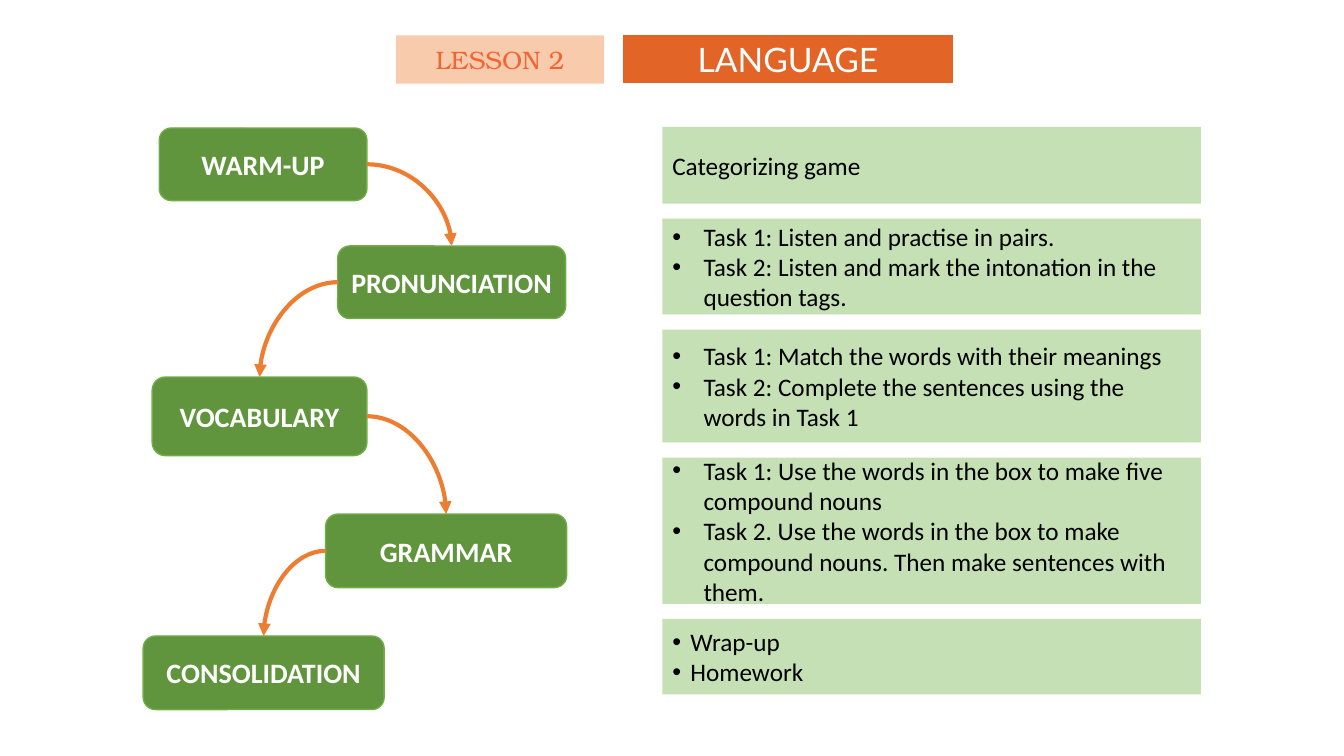
import pptx
import pptx.util
import pptx.oxml
import pptx.oxml.ns
import pptx.dml.color
import pptx.enum.shapes
import pptx.enum.text

SHAPES = pptx.enum.shapes.MSO_SHAPE
ALIGN = pptx.enum.text.PP_ALIGN
inches = pptx.util.Inches

GREEN, EDGE, PALE = "61953D", "70AD47", "C5E0B4"
ORANGE, ARROW, PEACH = "E36427", "ED7D31", "F8CBAD"

# Stage name, then left, top, width, height in inches
STAGES = [
    ("WARM-UP", (1.58, 1.27, 2.06, 0.72)),
    ("PRONUNCIATION", (3.35, 2.44, 2.26, 0.72)),
    ("VOCABULARY", (1.51, 3.74, 2.13, 0.78)),
    ("GRAMMAR", (3.23, 5.1, 2.39, 0.73)),
    ("CONSOLIDATION", (1.42, 6.31, 2.39, 0.73)),
]
# Panel height, bullet indent (0 for none), lines
PANELS = [
    (0.76, 0, ["Categorizing game"]),
    (0.95, 0.31, ["Task 1: Listen and practise in pairs.",
                  "Task 2: Listen and mark the intonation in the question tags."]),
    (1.12, 0.31, ["Task 1: Match the words with their meanings",
                  "Task 2: Complete the sentences using the words in Task 1"]),
    (1.45, 0.31, ["Task 1: Use the words in the box to make five compound nouns",
                  "Task 2. Use the words in the box to make compound nouns. "
                  "Then make sentences with them."]),
    (0.75, 0.18, ["Wrap-up", "Homework"]),
]
PANEL_LEFT, PANEL_TOP, PANEL_WIDTH, PANEL_GAP = 6.57, 1.26, 5.34, 0.15


def color(value):
    return pptx.dml.color.RGBColor.from_string(value)


def paint(box, fill, line=None, weight=1):
    box.fill.solid()
    box.fill.fore_color.rgb = color(fill)
    if line:
        box.line.color.rgb = color(line)
        box.line.width = pptx.util.Pt(weight)
    else:
        box.line.fill.background()


def add_bullet(para, indent):
    props = para._p.get_or_add_pPr()
    props.set("marL", str(inches(indent)))
    props.set("indent", str(-inches(indent)))
    for tag, name, value in (("a:buFont", "typeface", "Arial"), ("a:buChar", "char", "•")):
        mark = pptx.oxml.ns.qn(tag)
        props.append(props.makeelement(mark, {name: value}))


def write(box, lines, size=18, font="Calibri", ink="000000", bold=False,
          align=ALIGN.CENTER, indent=0):
    frame = box.text_frame
    frame.word_wrap = True
    frame.auto_size = pptx.enum.text.MSO_AUTO_SIZE.NONE
    frame.vertical_anchor = pptx.enum.text.MSO_ANCHOR.MIDDLE
    for index, line in enumerate(lines):
        para = frame.add_paragraph() if index else frame.paragraphs[0]
        para.alignment = align
        para.line_spacing = 1.0
        para.space_before = pptx.util.Pt(0)
        if indent:
            add_bullet(para, indent)
        span = para.add_run()
        span.text = line
        span.font.size = pptx.util.Pt(size)
        span.font.name = font
        span.font.bold = bold
        span.font.color.rgb = color(ink)


def add_box(page, kind, place):
    box = page.shapes.add_shape(kind, *map(inches, place))
    box.shadow.inherit = False
    return box


def add_arrow(page, start, end):
    """Curve from the side of one stage to the top of the next."""
    top, left, right = 0, 1, 3
    arrow = page.shapes.add_connector(pptx.enum.shapes.MSO_CONNECTOR.CURVE, 0, 0, 0, 0)
    arrow.begin_connect(start, right if end.left > start.left else left)
    arrow.end_connect(end, top)
    arrow.line.color.rgb = color(ARROW)
    arrow.line.width = pptx.util.Pt(3)
    props = arrow._element.spPr
    props.find(pptx.oxml.ns.qn("a:prstGeom")).set("prst", "curvedConnector2")
    line = props.find(pptx.oxml.ns.qn("a:ln"))
    line.append(line.makeelement(pptx.oxml.ns.qn("a:tailEnd"), {"type": "triangle"}))
    props.append(props.makeelement(pptx.oxml.ns.qn("a:effectLst"), {}))


def main():
    deck = pptx.Presentation()
    deck.slide_width, deck.slide_height = inches(13.33), inches(7.5)
    page = deck.slides.add_slide(deck.slide_layouts.get_by_name("Title Only"))

    title = page.shapes.title
    title.left, title.top, title.width, title.height = map(inches, (6.17, 0.34, 3.29, 0.49))
    paint(title, ORANGE, "FFFFFF", 1.5)
    write(title, ["LANGUAGE"], size=24, font="Lato", ink="FFFFFF")

    lesson = add_box(page, SHAPES.RECTANGLE, (3.93, 0.35, 2.06, 0.48))
    paint(lesson, PEACH)
    write(lesson, ["LESSON 2"], font="TeX Gyre Bonum", ink="F26532")

    stages = []
    for name, place in STAGES:
        stage = add_box(page, SHAPES.ROUNDED_RECTANGLE, place)
        paint(stage, GREEN, EDGE)
        write(stage, [name], size=20, ink="FFFFFF", bold=True)
        stages.append(stage)
    for start, end in zip(stages, stages[1:]):
        add_arrow(page, start, end)

    top = PANEL_TOP
    for height, indent, lines in PANELS:
        panel = add_box(page, SHAPES.RECTANGLE, (PANEL_LEFT, top, PANEL_WIDTH, height))
        paint(panel, PALE)
        write(panel, lines, align=ALIGN.LEFT, indent=indent)
        top += height + PANEL_GAP

    deck.save("out.pptx")


if __name__ == "__main__":
    main()
